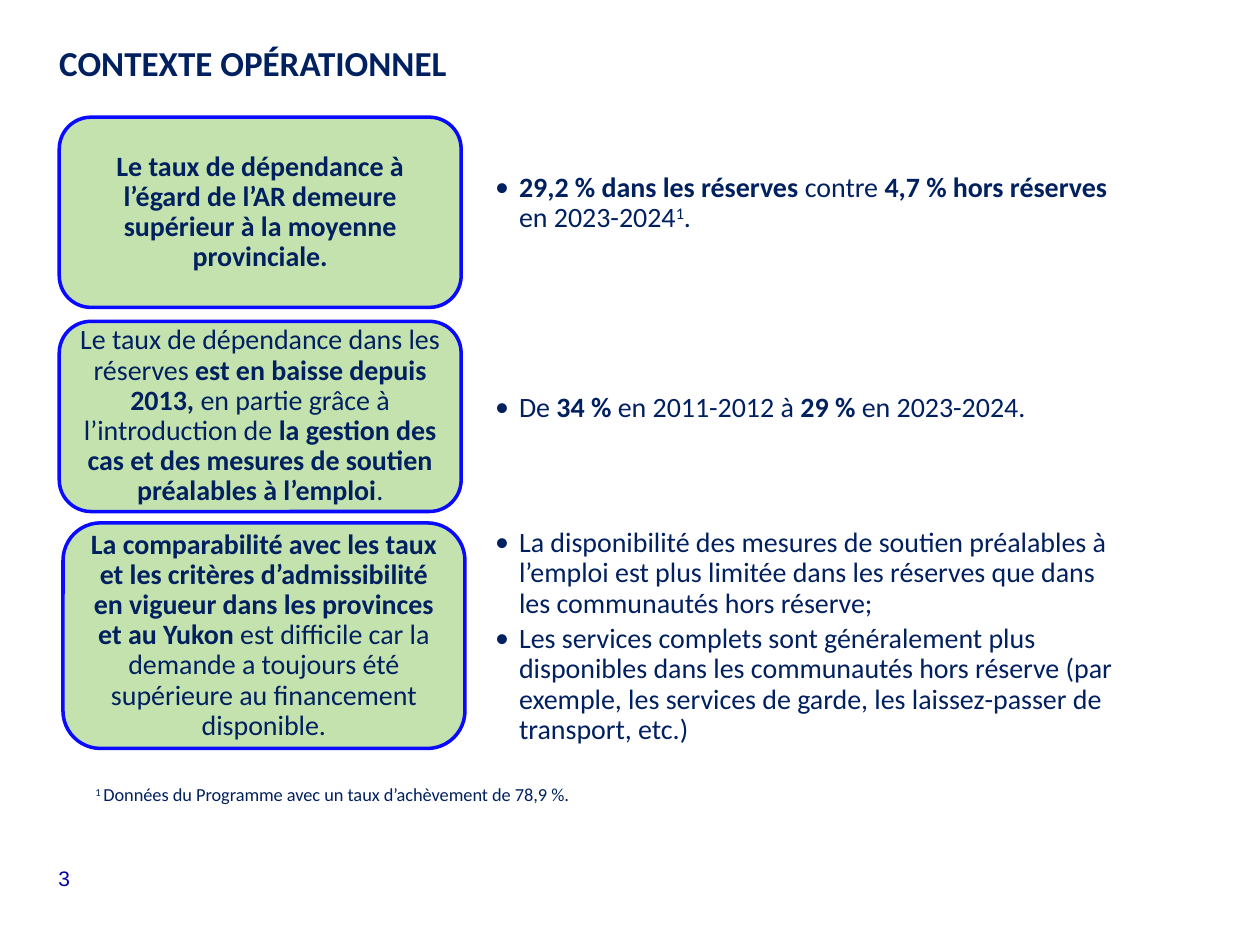
import pptx
import pptx.util
import pptx.dml.color
import pptx.enum.shapes
import pptx.enum.text
import pptx.oxml
import pptx.oxml.ns

Inches = pptx.util.Inches
Pt = pptx.util.Pt
RGBColor = pptx.dml.color.RGBColor
SHAPE = pptx.enum.shapes.MSO_SHAPE
ALIGN = pptx.enum.text.PP_ALIGN
ANCHOR = pptx.enum.text.MSO_ANCHOR

NAVY = RGBColor(0x00, 0x20, 0x60)
BLUE = RGBColor(0x0A, 0x0A, 0xFF)
NUMBER_BLUE = RGBColor(0x00, 0x00, 0xA3)
GREEN = RGBColor(0xC4, 0xE2, 0xAE)
WHITE = RGBColor(0xFF, 0xFF, 0xFF)

PANEL_LENGTH = 5.67
PANEL_CENTER = 6.49


def set_frame(box, inset_x, inset_y, anchor):
    """Wrap the text of a box and set its margins and anchor."""
    settings = {
        "word_wrap": True, "auto_size": pptx.enum.text.MSO_AUTO_SIZE.NONE,
        "vertical_anchor": anchor,
        "margin_left": Inches(inset_x), "margin_right": Inches(inset_x),
        "margin_top": Inches(inset_y), "margin_bottom": Inches(inset_y),
    }
    for name, value in settings.items():
        setattr(box.text_frame, name, value)


def write(para, spans, size=16, color=NAVY, font="Calibri", align=ALIGN.LEFT, spacing=0.9):
    """Fill a paragraph from (text, style) pairs: b is bold, ^ superscript."""
    para.alignment = align
    para.line_spacing = spacing
    for text, style in spans:
        span = para.add_run()
        span.text = text
        look = {"name": font, "size": Pt(size), "bold": style == "b"}
        for name, value in look.items():
            setattr(span.font, name, value)
        span.font.color.rgb = color
        if style == "^":
            span.font._element.set("baseline", "30000")


deck = pptx.Presentation()
deck.slide_width = Inches(10)
deck.slide_height = Inches(7.5)
page = deck.slides.add_slide(deck.slide_layouts[5])

# Title
title = page.shapes.title
title.left, title.top = Inches(0.47), Inches(0.33)
title.width, title.height = Inches(6.44), Inches(0.42)
set_frame(title, 0, 0, ANCHOR.TOP)
write(title.text_frame.paragraphs[0], [("CONTEXTE OPÉRATIONNEL", "b")],
      size=20, spacing=Pt(24))

# Rows: card left, top and height, card text, panel height, points top and height, points
rows = [
    (0.47, 0.93, 1.51,
     [("Le taux de dépendance à l’égard de l’AR demeure supérieur à la moyenne provinciale.", "b")],
     1.21, 1.07, 1.09,
     [[("29,2 % dans les réserves ", "b"), ("contre ", ""), ("4,7 % hors réserves ", "b"),
       ("en 2023-2024", ""), ("1", "^"), (".", "")]]),
    (0.47, 2.55, 1.51,
     [("Le taux de dépendance dans les réserves ", ""), ("est en baisse depuis 2013, ", "b"),
      ("en partie grâce à l’introduction de ", ""),
      ("la gestion des cas et des mesures de soutien préalables à l’emploi", "b"), (".", "")],
     1.21, 2.7, 1.09,
     [[("De ", ""), ("34 % ", "b"), ("en 2011-2012 à ", ""), ("29 % ", "b"),
       ("en 2023-2024.", "")]]),
    (0.5, 4.15, 1.79,
     [("La comparabilité avec les taux et les critères d’admissibilité en vigueur "
       "dans les provinces et au Yukon ", "b"),
      ("est difficile car la demande a toujours été supérieure au financement disponible.", "")],
     1.98, 4.16, 1.79,
     [[("La disponibilité des mesures de soutien préalables à l’emploi est plus limitée "
        "dans les réserves que dans les communautés hors réserve;", "")],
      [("Les services complets sont généralement plus disponibles dans les communautés "
        "hors réserve (par exemple, les services de garde, les laissez-passer de "
        "transport, etc.)", "")]]),
]

for left, top, height, statement, panel_height, points_top, points_height, points in rows:
    # White panel, turned so that its rounded end faces right
    middle = points_top + points_height / 2
    panel = page.shapes.add_shape(
        SHAPE.ROUND_2_SAME_RECTANGLE,
        Inches(PANEL_CENTER - panel_height / 2), Inches(middle - PANEL_LENGTH / 2),
        Inches(panel_height), Inches(PANEL_LENGTH))
    panel.rotation = 90
    panel.shadow.inherit = False
    panel.fill.solid()
    panel.fill.fore_color.rgb = WHITE
    panel.line.fill.background()
    fill_color = panel._element.spPr.find(".//" + pptx.oxml.ns.qn("a:srgbClr"))
    fill_color.append(pptx.oxml.parse_xml(
        '<a:alpha %s val="90000"/>' % pptx.oxml.ns.nsdecls("a")))

    # Bulleted points
    box = page.shapes.add_textbox(
        Inches(3.66), Inches(points_top), Inches(5.6), Inches(points_height))
    set_frame(box, 0.27, 0.14, ANCHOR.MIDDLE)
    for index, spans in enumerate(points):
        para = box.text_frame.add_paragraph() if index else box.text_frame.paragraphs[0]
        properties = para._p.get_or_add_pPr()
        properties.set("marL", str(Inches(0.19)))
        properties.set("indent", str(-Inches(0.19)))
        for tag in ('buFont %s typeface="Calibri"', 'buChar %s char="•"'):
            properties.append(pptx.oxml.parse_xml(
                "<a:" + tag % pptx.oxml.ns.nsdecls("a") + "/>"))
        para.space_after = Pt(3)
        write(para, spans)

    # Green card
    card = page.shapes.add_shape(
        SHAPE.ROUNDED_RECTANGLE,
        Inches(left), Inches(top), Inches(3.19), Inches(height))
    card.shadow.inherit = False
    card.fill.solid()
    card.fill.fore_color.rgb = GREEN
    card.line.color.rgb = BLUE
    card.line.width = Pt(2)
    set_frame(card, 0.07, 0.03, ANCHOR.MIDDLE)
    write(card.text_frame.paragraphs[0], statement, align=ALIGN.CENTER)

# Footnote
note = page.shapes.add_textbox(Inches(0.66), Inches(6.19), Inches(8.53), Inches(0.26))
set_frame(note, 0.1, 0.05, ANCHOR.TOP)
write(note.text_frame.paragraphs[0],
      [("1 ", "^"), ("Données du Programme avec un taux d’achèvement de 78,9 %.", "")],
      size=10.5)

# Page number
number = page.shapes.add_textbox(Inches(0.04), Inches(6.82), Inches(0.94), Inches(0.3))
set_frame(number, 0.1, 0.05, ANCHOR.TOP)
write(number.text_frame.paragraphs[0], [("3", "")], size=12, color=NUMBER_BLUE,
      font="Arial", align=ALIGN.CENTER, spacing=1.0)

deck.save("out.pptx")
